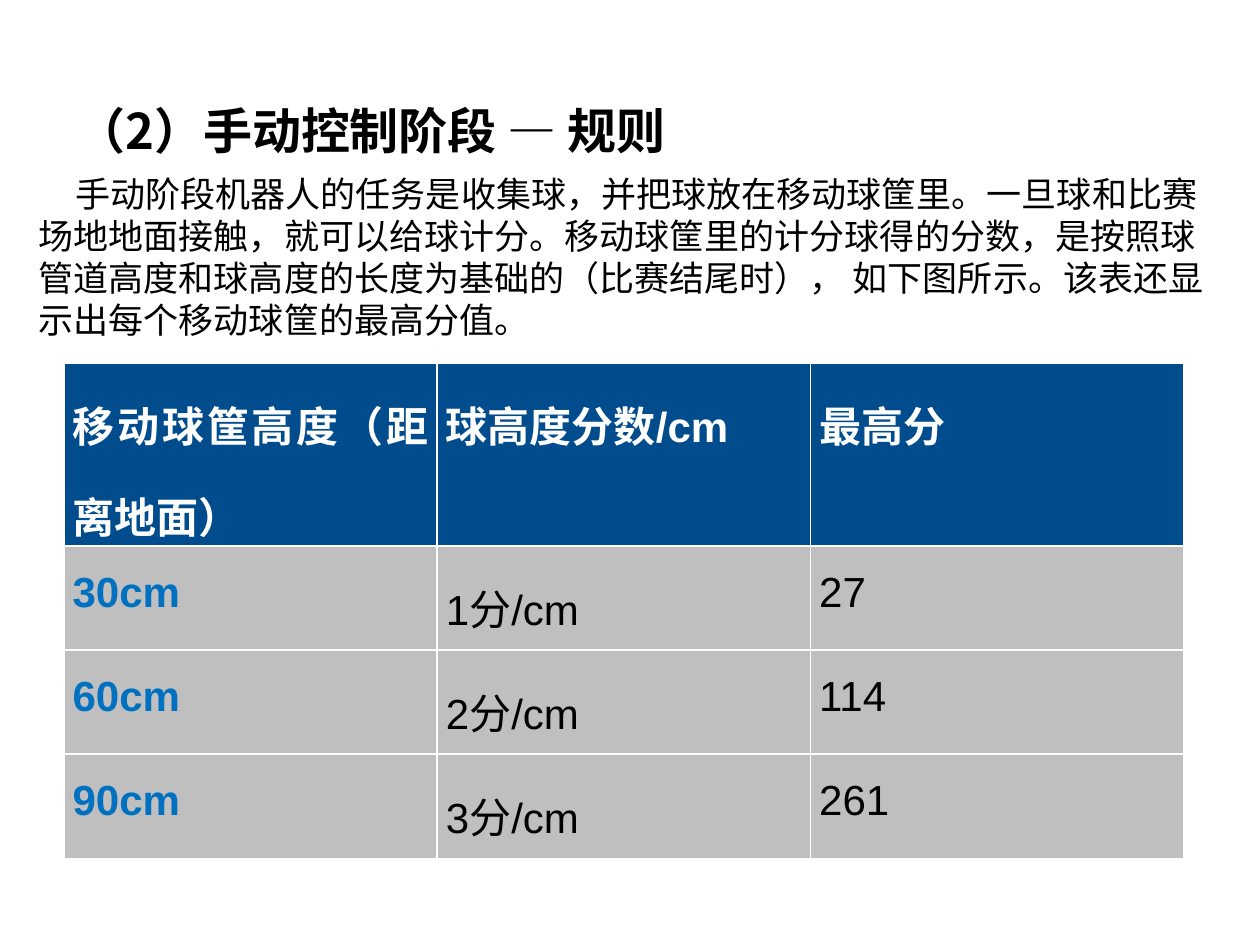
from dataclasses import dataclass

from pptx import Presentation
from pptx.dml.color import RGBColor
from pptx.enum.text import MSO_ANCHOR, MSO_AUTO_SIZE, PP_ALIGN
from pptx.slide import Slide
from pptx.table import _Cell
from pptx.util import Pt

BLACK = RGBColor(0x00, 0x00, 0x00)
WHITE = RGBColor(0xFF, 0xFF, 0xFF)
NAVY = RGBColor(0x01, 0x4C, 0x8D)
BLUE = RGBColor(0x00, 0x70, 0xC0)
GRAY = RGBColor(0xBF, 0xBF, 0xBF)

TITLE = "（2）手动控制阶段 — 规则"
RULES = (
    "手动阶段机器人的任务是收集球，并把球放在移动球筐里。一旦球和比赛场地地面接触，"
    "就可以给球计分。移动球筐里的计分球得的分数，是按照球管道高度和球高度的长度为基础的"
    "（比赛结尾时）， 如下图所示。该表还显示出每个移动球筐的最高分值。"
)


@dataclass(frozen=True)
class CellStyle:
    fill: RGBColor
    color: RGBColor
    bold: bool


@dataclass(frozen=True)
class ScoreRow:
    basket_height: str
    points_per_centimetre: str
    highest_score: str


HEADER_STYLE = CellStyle(NAVY, WHITE, True)
HEIGHT_STYLE = CellStyle(GRAY, BLUE, True)
SCORE_STYLE = CellStyle(GRAY, BLACK, False)

SCORE_ROWS = [
    ScoreRow("移动球筐高度（距离地面）", "球高度分数/cm", "最高分"),
    ScoreRow("30cm", "1分/cm", "27"),
    ScoreRow("60cm", "2分/cm", "114"),
    ScoreRow("90cm", "3分/cm", "261"),
]


def add_title(slide: Slide) -> None:
    title = slide.shapes.title
    title.left, title.top, title.width, title.height = Pt(36.5), Pt(57), Pt(440), Pt(34.5)
    text_frame = title.text_frame
    text_frame.text = TITLE
    text_frame.auto_size = MSO_AUTO_SIZE.NONE
    text_frame.vertical_anchor = MSO_ANCHOR.MIDDLE
    paragraph = text_frame.paragraphs[0]
    paragraph.alignment = PP_ALIGN.LEFT
    paragraph.font.name = "Noto Sans CJK SC"
    paragraph.font.size = Pt(28)
    paragraph.font.bold = True
    paragraph.font.color.rgb = BLACK


def add_rules(slide: Slide) -> None:
    text_box = slide.shapes.add_textbox(Pt(15), Pt(94.5), Pt(682.5), Pt(104.5))
    text_frame = text_box.text_frame
    text_frame.word_wrap = True
    text_frame.auto_size = MSO_AUTO_SIZE.SHAPE_TO_FIT_TEXT
    text_frame.vertical_anchor = MSO_ANCHOR.MIDDLE
    text_frame.text = RULES
    paragraph = text_frame.paragraphs[0]
    paragraph_properties = paragraph._p.get_or_add_pPr()
    paragraph_properties.set("marL", "0")
    paragraph_properties.set("indent", str(Pt(21)))
    paragraph.font.name = "Calibri"
    paragraph.font.size = Pt(20)
    paragraph.font.color.rgb = BLACK


def fill_cell(cell: _Cell, text: str, style: CellStyle) -> None:
    cell.margin_left = cell.margin_right = Pt(5)
    cell.margin_top = cell.margin_bottom = Pt(0)
    cell.fill.solid()
    cell.fill.fore_color.rgb = style.fill
    cell.text = text
    paragraph = cell.text_frame.paragraphs[0]
    paragraph.alignment = PP_ALIGN.JUSTIFY
    paragraph.line_spacing = 1.5
    paragraph.font.name = "Arial"
    paragraph.font.size = Pt(24)
    paragraph.font.bold = style.bold
    paragraph.font.color.rgb = style.color


def add_score_table(slide: Slide) -> None:
    table = slide.shapes.add_table(
        len(SCORE_ROWS), 3, Pt(36.5), Pt(207.5), Pt(640), Pt(238)
    ).table
    for row in table.rows:
        row.height = Pt(59.5)
    for row_index, row in enumerate(SCORE_ROWS):
        texts = (row.basket_height, row.points_per_centimetre, row.highest_score)
        for column_index, text in enumerate(texts):
            if row_index == 0:
                style = HEADER_STYLE
            elif column_index == 0:
                style = HEIGHT_STYLE
            else:
                style = SCORE_STYLE
            fill_cell(table.cell(row_index, column_index), text, style)


def main() -> None:
    presentation = Presentation()
    presentation.slide_width = Pt(720)
    presentation.slide_height = Pt(540)
    slide = presentation.slides.add_slide(presentation.slide_layouts[5])
    add_title(slide)
    add_score_table(slide)
    add_rules(slide)
    presentation.save("out.pptx")


if __name__ == "__main__":
    main()
